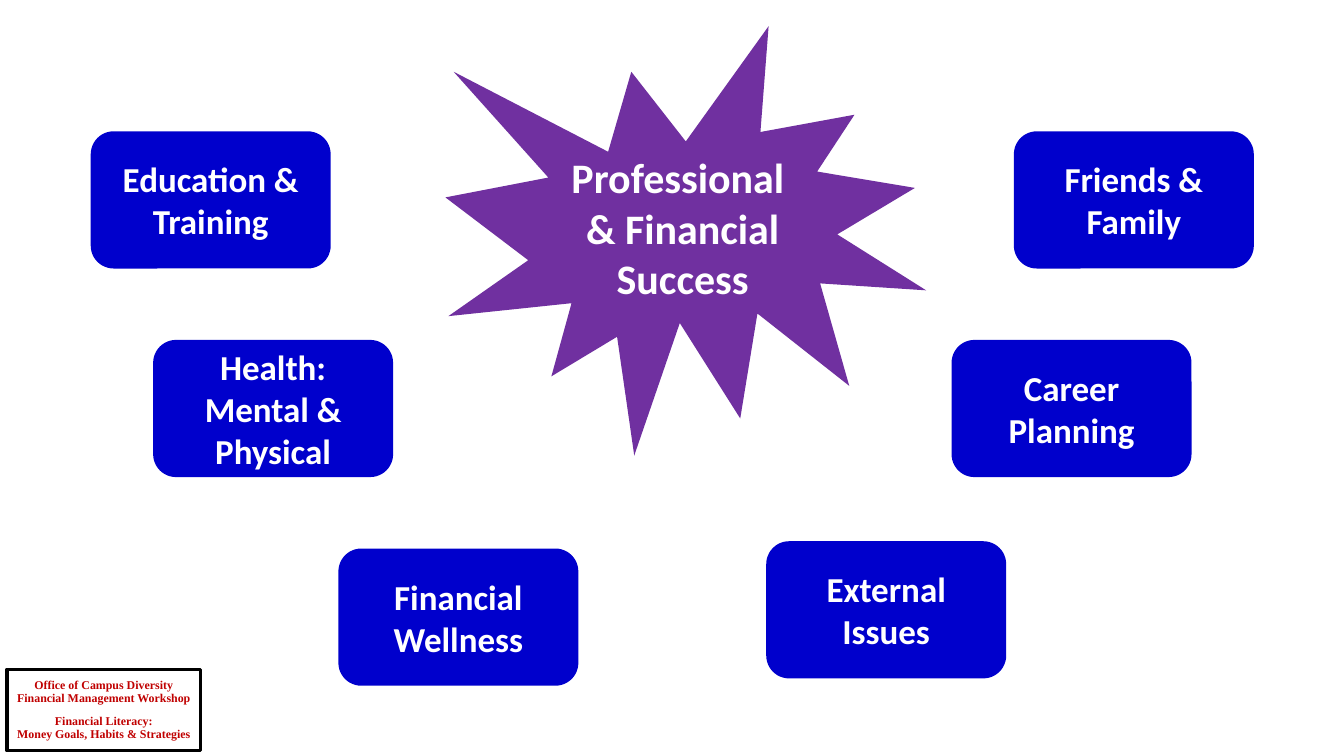
import pptx
import pptx.util
import pptx.dml.color
import pptx.enum.shapes
import pptx.enum.text

Pt = pptx.util.Pt
RGB = pptx.dml.color.RGBColor
KIND = pptx.enum.shapes.MSO_SHAPE

WHITE = RGB(0xFF, 0xFF, 0xFF)
BLACK = RGB(0, 0, 0)
RED = RGB(0xC0, 0, 0)
PURPLE = RGB(0x70, 0x30, 0xA0)
BLUE = RGB(0, 0, 0xCC)

BOX_W, BOX_H = 171.4, 98
TOPICS = [
    ("Friends & Family", 724.2, 93.8),
    ("Career Planning", 679.7, 242.8),
    ("External Issues", 547.3, 386.6),
    ("Education & Training", 64.8, 93.8),
    ("Health: Mental & Physical", 109.4, 242.8),
    ("Financial Wellness", 241.7, 391.8),
]


def add_shape(slide, kind, left, top, width, height, fill=None, line=None):
    shape = slide.shapes.add_shape(kind, Pt(left), Pt(top), Pt(width), Pt(height))
    shape.shadow.inherit = False
    if fill is None:
        shape.fill.background()
    else:
        shape.fill.solid()
        shape.fill.fore_color.rgb = fill
    if line is None:
        shape.line.fill.background()
    else:
        shape.line.color.rgb = line
        shape.line.width = Pt(2.25)
    return shape


def add_text(shape, *lines, size=25, font="Calibri", color=WHITE, space=1, gaps=()):
    """Fill a shape with centred lines; gaps maps a line index to space before."""
    frame = shape.text_frame
    frame.word_wrap = True
    frame.vertical_anchor = pptx.enum.text.MSO_ANCHOR.MIDDLE
    for i, line in enumerate(lines):
        para = frame.paragraphs[0] if i == 0 else frame.add_paragraph()
        para.alignment = pptx.enum.text.PP_ALIGN.CENTER
        para.line_spacing = space
        if i in gaps:
            para.space_before = Pt(gaps[i])
        run = para.add_run()
        run.text = line
        run.font.size = Pt(size)
        run.font.name = font
        run.font.bold = True
        run.font.color.rgb = color


def add_label(slide):
    label = add_shape(slide, KIND.RECTANGLE, 5, 478, 138.4, 58.4, line=BLACK)
    label.text_frame.margin_left = label.text_frame.margin_right = Pt(3)
    add_text(
        label,
        "Office of Campus Diversity",
        "Financial Management Workshop",
        "Financial Literacy:",
        "Money Goals, Habits & Strategies",
        size=8.5, font="Times New Roman", color=RED, space=0.9, gaps={2: 7},
    )


def add_star(slide):
    star = add_shape(slide, KIND.EXPLOSION1, 318.2, 18.7, 343.4, 306.7, fill=PURPLE)
    add_text(star, "Professional ", "& Financial Success", size=30)


def add_topic(slide, text, left, top):
    box = add_shape(slide, KIND.ROUNDED_RECTANGLE, left, top, BOX_W, BOX_H, fill=BLUE)
    add_text(box, text)


def main():
    deck = pptx.Presentation()
    deck.slide_width, deck.slide_height = Pt(960), Pt(540)
    slide = deck.slides.add_slide(deck.slide_layouts[6])
    add_label(slide)
    add_star(slide)
    for topic in TOPICS:
        add_topic(slide, *topic)
    deck.save("out.pptx")


if __name__ == "__main__":
    main()
